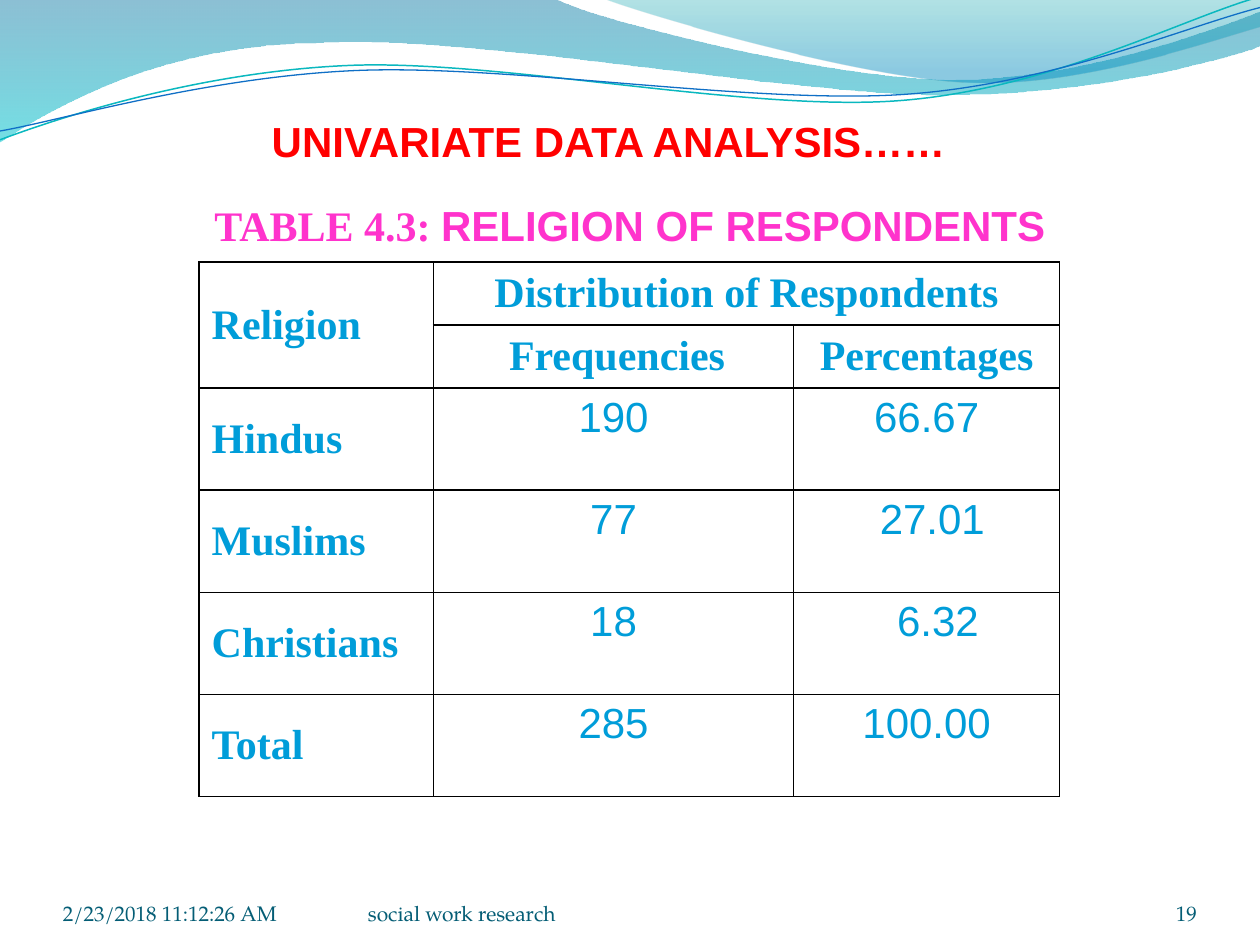
from lxml import etree
from pptx import Presentation
from pptx.dml.color import RGBColor
from pptx.enum import text
from pptx.oxml import ns
from pptx.util import Inches, Pt

RED = RGBColor(0xFF, 0x00, 0x00)
PINK = RGBColor(0xFF, 0x33, 0xCC)
SKY = RGBColor(0x00, 0x9D, 0xD9)
FOOTER = RGBColor(0x04, 0x5D, 0x75)
BLACK = RGBColor(0x00, 0x00, 0x00)
TEAL_LINE = RGBColor(0x0A, 0xB8, 0xBF)
BLUE_LINE = RGBColor(0x0F, 0x6F, 0xC6)
DEEP_BLUE = RGBColor(0x00, 0x74, 0xA1)
AQUA = RGBColor(0x00, 0xC6, 0xCF)
TEAL = RGBColor(0x00, 0xA1, 0xA9)
BLUE = RGBColor(0x00, 0x8B, 0xBF)

SERIF, SANS = "Times New Roman", "Arial"
LABEL = {"name": SERIF, "size": Pt(24), "bold": True}
VALUE = {"name": SANS, "size": Pt(24), "bold": False}
HEADING = {"name": SANS, "size": Pt(24), "bold": True}
SMALL = {"name": "TeX Gyre Pagella", "size": Pt(12)}
LEFT, CENTER, RIGHT = (text.PP_ALIGN.LEFT, text.PP_ALIGN.CENTER,
                       text.PP_ALIGN.RIGHT)
TOP, MIDDLE, BOTTOM = (text.MSO_ANCHOR.TOP, text.MSO_ANCHOR.MIDDLE,
                       text.MSO_ANCHOR.BOTTOM)

BROAD_WAVE = [
    [(0, -0.01)], [(4.4, -0.01)],
    [(4.76, 0.17), (6.64, 0.63), (7.58, 0.63)],
    [(8.53, 0.63), (9.58, 0.26), (10, 0.09)], [(10.01, 0.36)],
    [(9.83, 0.44), (8.7, 0.76), (7.46, 0.75)],
    [(6.22, 0.75), (3.82, 0.28), (2.57, 0.34)],
    [(1.29, 0.35), (0.46, 0.83), (-0.01, 1.13)], [(0, -0.01)],
]
RIGHT_WAVE = [
    [(4.79, -0.01)], [(5.09, 0.11), (6.82, 0.62), (7.69, 0.65)],
    [(8.56, 0.69), (9.61, 0.32), (10, 0.21)], [(10, 0)], [(4.79, -0.01)],
]
TEAL_STROKE = [
    [(0, 1.11)], [(0.48, 0.93), (1.58, 0.57), (2.77, 0.52)],
    [(3.95, 0.47), (5.93, 0.89), (7.13, 0.8)],
    [(8.33, 0.71), (9.38, 0.15), (9.98, -0.02)],
]
BLUE_STROKE = [
    [(0, 1.04)], [(0.47, 0.96), (1.64, 0.61), (2.83, 0.56)],
    [(4.03, 0.51), (5.97, 0.83), (7.17, 0.75)],
    [(8.36, 0.67), (9.41, 0.21), (10, 0.06)],
]
RELIGIONS = [
    ("Hindus", "190", "66.67", 0),
    ("Muslims", "77", "27.01", 0.09),
    ("Christians", "18", "6.32", 0.18),
    ("Total", "285", "100.00", 0),
]


def apply(target, values):
    for name, value in values.items():
        setattr(target, name, value)


def bend_lines(shape, segments):
    lines = iter(list(shape._element.iter(ns.qn("a:lnTo"))))
    for segment in segments[1:]:
        parts = [next(lines) for _ in segment]
        if len(parts) == 3:
            curve = etree.Element(ns.qn("a:cubicBezTo"))
            parts[0].addprevious(curve)
            for part in parts:
                curve.append(part[0])
                part.getparent().remove(part)


def add_curve(page, segments, close):
    start, *points = [(Inches(x), Inches(y))
                      for segment in segments for x, y in segment]
    builder = page.shapes.build_freeform(*start)
    builder.add_line_segments(points, close=close)
    shape = builder.convert_to_shape()
    bend_lines(shape, segments)
    shape.shadow.inherit = False
    return shape


def add_wave(page, segments, stops):
    wave = add_curve(page, segments, True)
    wave.line.fill.background()
    wave.fill.gradient()
    wave.fill.gradient_angle = 270
    for stop, (position, color, _) in zip(wave.fill.gradient_stops, stops):
        stop.position = position
        stop.color.rgb = color
    colors = wave._element.spPr.iter(ns.qn("a:srgbClr"))
    for element, (_, _, opacity) in zip(colors, stops):
        etree.SubElement(element, ns.qn("a:alpha"), val=str(opacity * 1000))


def add_stroke(page, segments, color, width):
    stroke = add_curve(page, segments, False)
    stroke.fill.background()
    stroke.line.color.rgb = color
    stroke.line.width = Pt(width)


def add_span(para, words, font, color):
    span = para.add_run()
    span.text = words
    apply(span.font, font)
    span.font.color.rgb = color


def add_text(page, place, spans, color, align, anchor, grow=False):
    box = page.shapes.add_textbox(*map(Inches, place))
    fit = text.MSO_AUTO_SIZE.SHAPE_TO_FIT_TEXT if grow else text.MSO_AUTO_SIZE.NONE
    apply(box.text_frame, {
        "word_wrap": True, "auto_size": fit, "vertical_anchor": anchor,
        "margin_left": 0, "margin_right": 0, "margin_top": 0, "margin_bottom": 0})
    para = box.text_frame.paragraphs[0]
    para.alignment = align
    for words, font in spans:
        add_span(para, words, font, color)


def add_borders(cell):
    properties = cell._tc.get_or_add_tcPr()
    for index, side in enumerate(("lnL", "lnR", "lnT", "lnB")):
        line = etree.Element(ns.qn(f"a:{side}"), w=str(Pt(1)))
        fill = etree.SubElement(line, ns.qn("a:solidFill"))
        etree.SubElement(fill, ns.qn("a:srgbClr"), val=str(BLACK))
        properties.insert(index, line)


def fill_cell(cell, words, font, align, anchor, indent=0):
    cell.vertical_anchor = anchor
    para = cell.text_frame.paragraphs[0]
    para.alignment = align
    if indent:
        para._p.get_or_add_pPr().set("marL", str(Inches(indent)))
    add_span(para, words, font, SKY)


def add_religion_table(page):
    place = map(Inches, (1.58, 2.08, 6.84, 4.25))
    table = page.shapes.add_table(6, 3, *place).table
    apply(table, {"first_row": False, "horz_banding": False})
    for column, width in zip(table.columns, (1.86, 2.86, 2.11)):
        column.width = Inches(width)
    for row, height in zip(table.rows, [0.48] * 2 + [0.81] * 4):
        row.height = Inches(height)
    for cell in table.iter_cells():
        cell.fill.background()
        add_borders(cell)
    table.cell(0, 0).merge(table.cell(1, 0))
    table.cell(0, 1).merge(table.cell(0, 2))
    fill_cell(table.cell(0, 0), "Religion", LABEL, LEFT, MIDDLE)
    fill_cell(table.cell(0, 1), "Distribution of Respondents", LABEL, CENTER, MIDDLE)
    fill_cell(table.cell(1, 1), "Frequencies", LABEL, LEFT, MIDDLE, 0.5)
    fill_cell(table.cell(1, 2), "Percentages", LABEL, CENTER, MIDDLE)
    for row, (religion, count, share, indent) in enumerate(RELIGIONS, 2):
        fill_cell(table.cell(row, 0), religion, LABEL, LEFT, MIDDLE)
        fill_cell(table.cell(row, 1), count, VALUE, CENTER, TOP)
        fill_cell(table.cell(row, 2), share, VALUE, CENTER, TOP, indent)


def main():
    deck = Presentation()
    apply(deck, {"slide_width": Inches(10), "slide_height": Inches(7.5)})
    page = deck.slides.add_slide(deck.slide_layouts[6])

    add_wave(page, BROAD_WAVE, [(0, DEEP_BLUE, 45), (1, AQUA, 55)])
    add_wave(page, RIGHT_WAVE, [(0, TEAL, 30), (0.8, BLUE, 45)])
    add_stroke(page, TEAL_STROKE, TEAL_LINE, 0.85)
    add_stroke(page, BLUE_STROKE, BLUE_LINE, 0.75)

    add_text(page, (0, 1.58, 10, 0.4),
             [("TABLE 4.3: ", LABEL), ("RELIGION OF RESPONDENTS", HEADING)],
             PINK, CENTER, MIDDLE, grow=True)
    add_religion_table(page)
    for left, width, words, align in (
            (0.5, 2.33, "2/23/2018 11:12:26 AM", LEFT),
            (8.67, 0.83, "19", RIGHT),
            (2.92, 3.67, "social work research", LEFT)):
        add_text(page, (left, 6.95, width, 0.4), [(words, SMALL)],
                 FOOTER, align, BOTTOM)
    add_text(page, (1.58, 0.92, 6.5, 0.4),
             [("UNIVARIATE DATA ANALYSIS……", HEADING)],
             RED, CENTER, MIDDLE, grow=True)

    deck.save("out.pptx")


if __name__ == "__main__":
    main()
